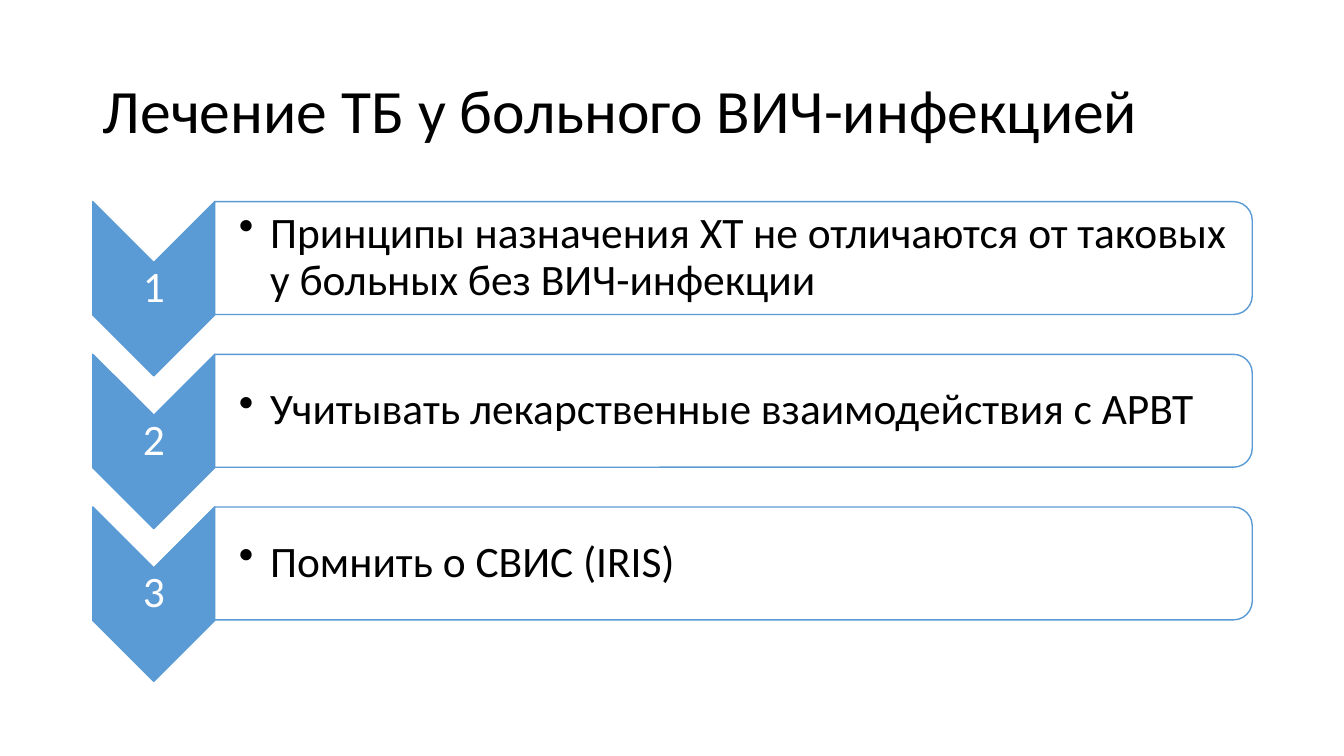
from dataclasses import dataclass

from lxml import etree
from pptx import Presentation
from pptx.dml.color import RGBColor
from pptx.enum.shapes import MSO_SHAPE
from pptx.enum.text import MSO_ANCHOR, MSO_AUTO_SIZE, PP_ALIGN
from pptx.oxml.ns import qn
from pptx.shapes.autoshape import Shape
from pptx.slide import Slide
from pptx.util import Inches, Pt

CHEVRON = MSO_SHAPE.CHEVRON
BAR = MSO_SHAPE.ROUND_2_SAME_RECTANGLE
MIDDLE = MSO_ANCHOR.MIDDLE
LEFT, CENTER = PP_ALIGN.LEFT, PP_ALIGN.CENTER
NO_FIT = MSO_AUTO_SIZE.NONE
FONT = "Calibri"
BLUE, WHITE, BLACK = "5B9BD5", "FFFFFF", "000000"
TOP, PITCH = 2.0, 1.515


@dataclass
class Box:
    left: float
    top: float
    width: float
    height: float


@dataclass
class Step:
    mark: str
    text: str


STEPS = [
    Step("1", "Принципы назначения ХТ не отличаются от таковых у больных без ВИЧ-инфекции"),
    Step("2", "Учитывать лекарственные взаимодействия с АРВТ"),
    Step("3", "Помнить о СВИС (IRIS)"),
]


def color(code: str) -> RGBColor:
    return RGBColor.from_string(code)


def place(shape: Shape, box: Box) -> None:
    shape.left, shape.top = Inches(box.left), Inches(box.top)
    shape.width, shape.height = Inches(box.width), Inches(box.height)


def write(shape: Shape, text: str, size: float, code: str, align: PP_ALIGN) -> None:
    frame = shape.text_frame
    frame.word_wrap = True
    frame.auto_size = NO_FIT
    frame.vertical_anchor = MIDDLE
    frame.text = text
    para = frame.paragraphs[0]
    para.alignment = align
    para.line_spacing = 0.9
    para.font.name = FONT
    para.font.size = Pt(size)
    para.font.color.rgb = color(code)


def add_turned(slide: Slide, kind: MSO_SHAPE, box: Box, fill: str) -> Shape:
    shift = (box.width - box.height) / 2
    shape = slide.shapes.add_shape(kind, 0, 0, 0, 0)
    place(shape, Box(box.left + shift, box.top - shift, box.height, box.width)
          if kind == BAR else
          Box(box.left + shift, box.top - shift, box.height, box.width))
    shape.rotation = 90
    shape.shadow.inherit = False
    shape.fill.solid()
    shape.fill.fore_color.rgb = color(fill)
    shape.line.color.rgb = color(BLUE)
    shape.line.width = Pt(1)
    return shape


def add_label(slide: Slide, box: Box, text: str, code: str, align: PP_ALIGN, inset: float) -> Shape:
    label = slide.shapes.add_textbox(0, 0, 0, 0)
    place(label, box)
    write(label, text, 31, code, align)
    frame = label.text_frame
    frame.margin_left = Inches(inset)
    frame.margin_top = frame.margin_right = frame.margin_bottom = Inches(0.02)
    return label


def add_bullet(shape: Shape) -> None:
    props = shape.text_frame.paragraphs[0]._p.get_or_add_pPr()
    props.set("marL", str(Inches(0.31)))
    props.set("indent", str(-Inches(0.31)))
    etree.SubElement(props, qn("a:buChar"), char="•")
    props.append(props.find(qn("a:defRPr")))


def fade(shape: Shape, share: int) -> None:
    tone = shape._element.spPr.find(qn("a:solidFill"))[0]
    etree.SubElement(tone, qn("a:alpha"), val=str(share * 1000))


def add_step(slide: Slide, step: Step, top: float) -> None:
    add_turned(slide, CHEVRON, Box(0.92, top, 1.21, 1.73), BLUE)
    add_label(slide, Box(0.92, top + 0.6, 1.21, 0.52), step.mark, WHITE, CENTER, 0.02)
    bar = add_turned(slide, BAR, Box(2.13, top, 10.29, 1.12), WHITE)
    fade(bar, 90)
    label = add_label(slide, Box(2.13, top + 0.05, 10.24, 1.01), step.text, BLACK, LEFT, 0.24)
    add_bullet(label)


def main() -> None:
    deck = Presentation()
    deck.slide_width, deck.slide_height = Inches(13.33), Inches(7.5)
    slide = deck.slides.add_slide(deck.slide_layouts[5])
    title = slide.shapes.title
    place(title, Box(0.92, 0.4, 11.5, 1.45))
    write(title, "Лечение ТБ у больного ВИЧ-инфекцией", 44, BLACK, LEFT)
    for row, step in enumerate(STEPS):
        add_step(slide, step, TOP + row * PITCH)
    deck.save("out.pptx")


if __name__ == "__main__":
    main()
